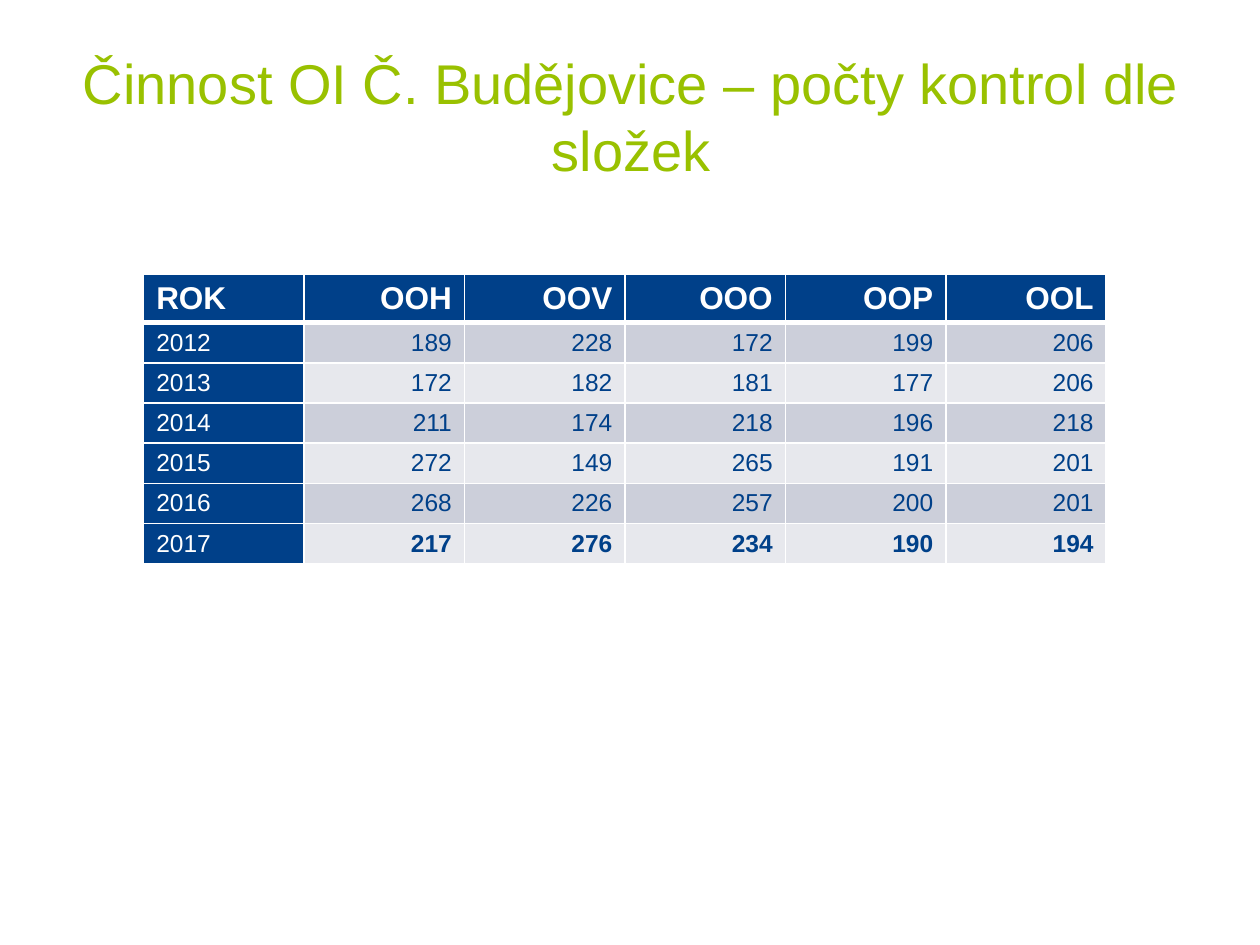
import pptx
import pptx.dml.color
import pptx.enum.text
import pptx.oxml
import pptx.oxml.ns
import pptx.util
from pptx.util import Inches

GREEN, BLUE, WHITE = "99C100", "004089", "FFFFFF"
BANDS = ("CCCFDA", "E7E8ED")
ALIGN = pptx.enum.text.PP_ALIGN
MIDDLE = pptx.enum.text.MSO_ANCHOR.MIDDLE

TITLE = "Činnost OI Č. Budějovice – počty kontrol dle složek"
HEADER = ("ROK", "OOH", "OOV", "OOO", "OOP", "OOL")
INSPECTIONS = (
    (2012, 189, 228, 172, 199, 206),
    (2013, 172, 182, 181, 177, 206),
    (2014, 211, 174, 218, 196, 218),
    (2015, 272, 149, 265, 191, 201),
    (2016, 268, 226, 257, 200, 201),
    (2017, 217, 276, 234, 190, 194),
)


def color(hex_text):
    return pptx.dml.color.RGBColor.from_string(hex_text)


def write_text(frame, text, size, hex_text, bold=False, align=ALIGN.LEFT):
    para = frame.paragraphs[0]
    para.alignment = align
    span = para.add_run()
    span.text = text
    span.font.name = "Arial"
    span.font.size = pptx.util.Pt(size)
    span.font.bold = bold
    span.font.color.rgb = color(hex_text)


def set_borders(cell, bottom=1, top=1):
    properties = cell._tc.get_or_add_tcPr()
    widths = {"lnL": 1, "lnR": 1, "lnT": top, "lnB": bottom}
    for index, (side, width) in enumerate(widths.items()):
        line = pptx.oxml.parse_xml(
            f'<a:{side} {pptx.oxml.ns.nsdecls("a")} w="{pptx.util.Pt(width)}">'
            f'<a:solidFill><a:srgbClr val="{WHITE}"/></a:solidFill></a:{side}>'
        )
        properties.insert(index, line)


def place_title(page, left, top, width, height):
    title = page.shapes.title
    title.left, title.top, title.width, title.height = left, top, width, height
    frame = title.text_frame
    frame.word_wrap = True
    frame.vertical_anchor = MIDDLE
    write_text(frame, TITLE, size=32, hex_text=GREEN, align=ALIGN.CENTER)


def place_table(page, left, top, width, height):
    rows = (HEADER,) + INSPECTIONS
    last_row = len(rows) - 1
    table = page.shapes.add_table(
        len(rows), len(HEADER), left, top, width, height
    ).table
    for row_index, values in enumerate(rows):
        is_header = row_index == 0
        for column_index, value in enumerate(values):
            is_year = column_index == 0
            is_blue = is_header or is_year
            cell = table.cell(row_index, column_index)
            cell.vertical_anchor = MIDDLE
            cell.fill.solid()
            cell.fill.fore_color.rgb = color(
                BLUE if is_blue else BANDS[(row_index - 1) % 2]
            )
            set_borders(
                cell,
                bottom=3 if is_header else 1,
                top=3 if row_index == 1 else 1,
            )
            write_text(
                cell.text_frame,
                str(value),
                size=18 if is_header else 14,
                hex_text=WHITE if is_blue else BLUE,
                bold=is_header or (row_index == last_row and not is_year),
                align=ALIGN.LEFT if is_year else ALIGN.RIGHT,
            )


def main():
    deck = pptx.Presentation()
    deck.slide_width, deck.slide_height = Inches(10), Inches(7.5)
    page = deck.slides.add_slide(deck.slide_layouts[5])
    place_title(page, Inches(0.51), Inches(0.29), Inches(9), Inches(1.25))
    place_table(page, Inches(1.14), Inches(2.18), Inches(7.64), Inches(2.1))
    deck.save("out.pptx")


if __name__ == "__main__":
    main()
